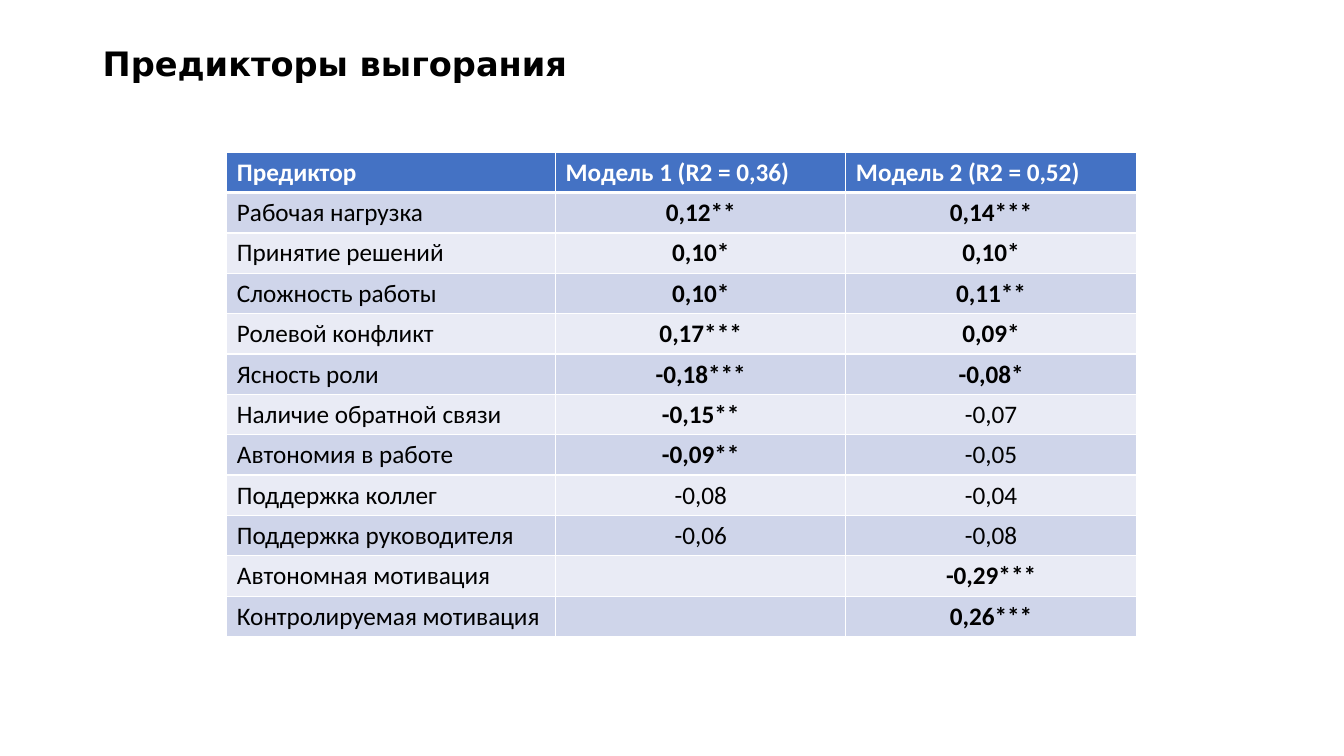
from lxml.etree import SubElement
from pptx import Presentation
from pptx.dml.color import RGBColor
from pptx.enum.text import MSO_ANCHOR, PP_ALIGN
from pptx.oxml.ns import qn
from pptx.util import Inches, Pt

WHITE = RGBColor(0xFF, 0xFF, 0xFF)
BLACK = RGBColor(0, 0, 0)
BLUE = RGBColor(0x44, 0x72, 0xC4)
BANDS = [RGBColor(0xE9, 0xEB, 0xF5), RGBColor(0xCF, 0xD5, 0xEA)]

WIDTHS = [3.26, 2.88, 2.88]
HEIGHT = 0.4
ROWS = [
    ("Предиктор", "Модель 1 (R2 = 0,36)", "Модель 2 (R2 = 0,52)"),
    ("Рабочая нагрузка", "0,12**", "0,14***"),
    ("Принятие решений", "0,10*", "0,10*"),
    ("Сложность работы", "0,10*", "0,11**"),
    ("Ролевой конфликт", "0,17***", "0,09*"),
    ("Ясность роли", "-0,18***", "-0,08*"),
    ("Наличие обратной связи", "-0,15**", "-0,07"),
    ("Автономия в работе", "-0,09**", "-0,05"),
    ("Поддержка коллег", "-0,08", "-0,04"),
    ("Поддержка руководителя", "-0,06", "-0,08"),
    ("Автономная мотивация", "", "-0,29***"),
    ("Контролируемая мотивация", "", "0,26***"),
]


def set_font(para, name, size, color, bold):
    font = para.font
    font.name = name
    font.size = Pt(size)
    font.color.rgb = color
    font.bold = bold


def add_title(slide, text):
    box = slide.shapes.add_textbox(Inches(0.92), Inches(0.4), Inches(11.5), Inches(0.5))
    frame = box.text_frame
    frame.word_wrap = True
    frame.vertical_anchor = MSO_ANCHOR.MIDDLE
    para = frame.paragraphs[0]
    para.text = text
    para.line_spacing = 0.9
    set_font(para, "DejaVu Sans", 24, BLACK, True)


def set_border(cell, side, width):
    props = cell._tc.get_or_add_tcPr()
    line = SubElement(props, qn(f"a:ln{side}"), w=str(Pt(width)))
    fill = SubElement(line, qn("a:solidFill"))
    SubElement(fill, qn("a:srgbClr"), val=str(WHITE))


def fill_cell(cell, text, row, col):
    head = row == 0
    for side in "LRTB":
        thick = (head and side == "B") or (row == 1 and side == "T")
        set_border(cell, side, 3 if thick else 1)
    cell.fill.solid()
    cell.fill.fore_color.rgb = BLUE if head else BANDS[row % 2]
    para = cell.text_frame.paragraphs[0]
    para.text = text
    set_font(para, "Calibri", 18, WHITE if head else BLACK, head or "*" in text)
    if not head and col > 0:
        para.alignment = PP_ALIGN.CENTER


def add_grid(slide):
    frame = slide.shapes.add_table(
        len(ROWS), len(WIDTHS), Inches(2.25), Inches(1.51),
        Inches(sum(WIDTHS)), Inches(HEIGHT * len(ROWS)),
    )
    table = frame.table
    for col, width in enumerate(WIDTHS):
        table.columns[col].width = Inches(width)
    for row, texts in enumerate(ROWS):
        table.rows[row].height = Inches(HEIGHT)
        for col, text in enumerate(texts):
            fill_cell(table.cell(row, col), text, row, col)


def main():
    deck = Presentation()
    deck.slide_width = Inches(13.33)
    deck.slide_height = Inches(7.5)
    slide = deck.slides.add_slide(deck.slide_layouts[6])
    add_title(slide, "Предикторы выгорания")
    add_grid(slide)
    deck.save("out.pptx")


if __name__ == "__main__":
    main()
